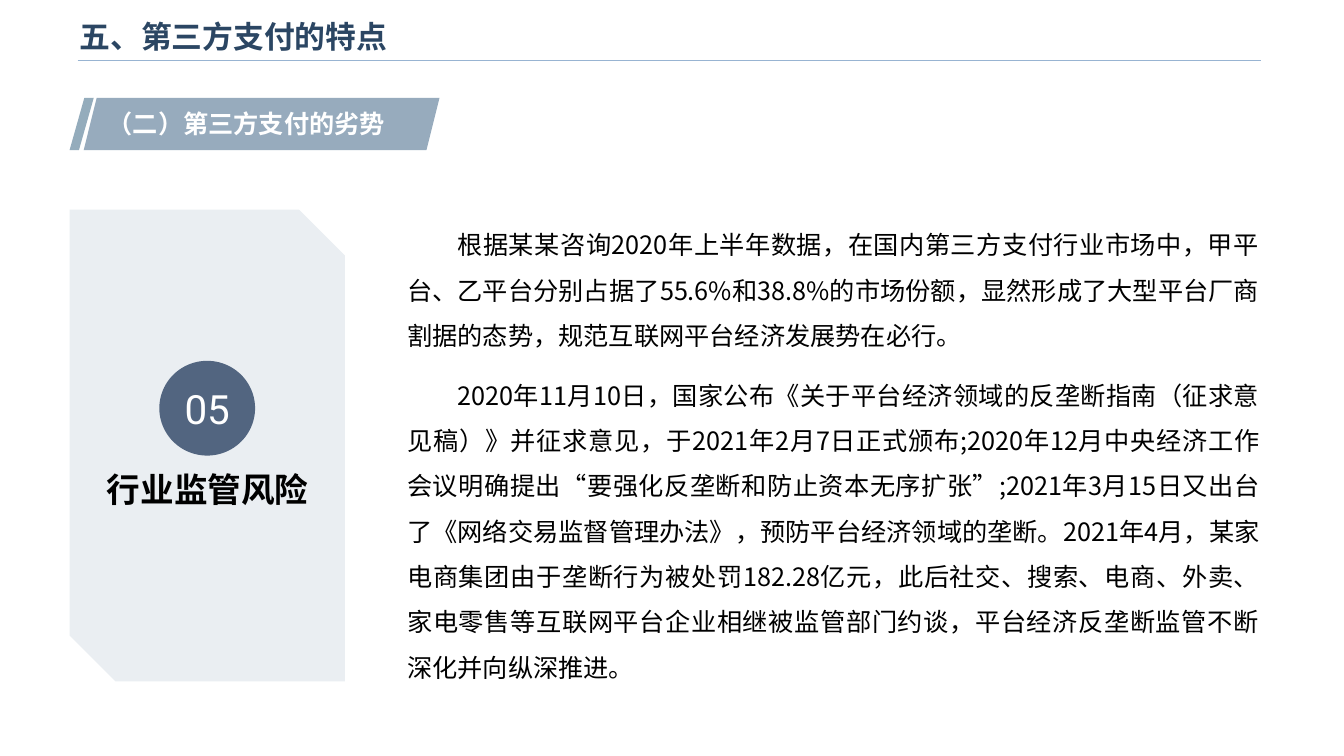
"""Build the slide on the regulatory risk of third-party payment."""
import dataclasses
import typing

import pptx
import pptx.dml.color
import pptx.enum.shapes
import pptx.enum.text
import pptx.oxml
import pptx.oxml.ns
import pptx.util

PX = 9144
Kind = pptx.enum.shapes.MSO_SHAPE
Align = pptx.enum.text.PP_ALIGN
Anchor = pptx.enum.text.MSO_ANCHOR
Fit = pptx.enum.text.MSO_AUTO_SIZE
Pt = pptx.util.Pt
Box = tuple[int, int, int, int]
SANS = "Noto Sans CJK SC"
COLORS = {
    "rule": "98B4D2", "title": "2B4663", "slip": "94ACBC", "tag": "97ABBD",
    "card": "EAEEF2", "disc": "526580", "white": "FFFFFF", "black": "000000",
}


@dataclasses.dataclass(frozen=True)
class Form:
    kind: Kind
    box: Box
    fill: str
    skew: typing.Optional[float] = None


@dataclasses.dataclass(frozen=True)
class Style:
    size: float
    color: str
    bold: bool = False
    face: str = SANS
    para: dict[str, typing.Any] = dataclasses.field(default_factory=dict)
    indent: int = 0


@dataclasses.dataclass(frozen=True)
class Label:
    box: Box
    style: Style
    lines: tuple[str, ...]


TAG = (
    Form(Kind.PARALLELOGRAM, (69, 97, 24, 52), "slip", 0.613),
    Form(Kind.PARALLELOGRAM, (83, 97, 353, 52), "tag", 0.25),
)
CARD = Form(Kind.SNIP_2_DIAG_RECTANGLE, (69, 208, 273, 468), "card")
DISC = Form(Kind.OVAL, (158, 358, 95, 94), "disc")

HEAD = Style(22, "title", True, "Arial", {"alignment": Align.LEFT})
COUNT = Style(28.8, "white", False, "Roboto", {"alignment": Align.CENTER})
PROSE = Style(
    18, "black", indent=50,
    para={"alignment": Align.JUSTIFY, "line_spacing": 1.5, "space_after": Pt(10)},
)
LABELS = (
    Label((97, 103, 308, 40), Style(18, "white", True), ("（二）第三方支付的劣势",)),
    Label(
        (75, 460, 262, 50),
        Style(24, "black", True, para={"alignment": Align.CENTER}),
        ("行业监管风险",),
    ),
    Label(
        (394, 208, 865, 478), PROSE,
        (
            "根据某某咨询2020年上半年数据，在国内第三方支付行业市场中，"
            "甲平台、乙平台分别占据了55.6%和38.8%的市场份额，"
            "显然形成了大型平台厂商割据的态势，规范互联网平台经济发展势在必行。",
            "2020年11月10日，国家公布《关于平台经济领域的反垄断指南（征求意见稿）》"
            "并征求意见，于2021年2月7日正式颁布;2020年12月中央经济工作会议明确提出"
            "“要强化反垄断和防止资本无序扩张”;2021年3月15日又出台了"
            "《网络交易监督管理办法》，预防平台经济领域的垄断。"
            "2021年4月，某家电商集团由于垄断行为被处罚182.28亿元，"
            "此后社交、搜索、电商、外卖、家电零售等互联网平台企业相继被监管部门约谈，"
            "平台经济反垄断监管不断深化并向纵深推进。",
        ),
    ),
)


def scale(*sizes: int) -> list[pptx.util.Emu]:
    """Turn px into EMU."""
    return [pptx.util.Emu(size * PX) for size in sizes]


def tint(name: str) -> pptx.dml.color.RGBColor:
    """Look up a colour by name."""
    return pptx.dml.color.RGBColor.from_string(COLORS[name])


def apply(thing: typing.Any, values: dict[str, typing.Any]) -> None:
    """Set each attribute given in values."""
    for key, value in values.items():
        setattr(thing, key, value)


def write(frame: typing.Any, lines: tuple[str, ...], style: Style) -> None:
    """Fill a text frame with one styled paragraph per line."""
    for index, line in enumerate(lines):
        para = frame.add_paragraph() if index else frame.paragraphs[0]
        apply(para, style.para)
        if style.indent:
            props = para._p.get_or_add_pPr()
            props.set("marL", "0")
            props.set("indent", str(style.indent * PX))
        run = para.add_run()
        run.text = line
        apply(run.font, {"size": Pt(style.size), "bold": style.bold, "name": style.face})
        run.font.color.rgb = tint(style.color)
        east = pptx.oxml.parse_xml(
            f'<a:ea {pptx.oxml.ns.nsdecls("a")} typeface="{SANS}"/>'
        )
        run.font._element.find(pptx.oxml.ns.qn("a:latin")).addnext(east)


def draw(shapes: typing.Any, form: Form) -> typing.Any:
    """Draw a flat filled shape."""
    shape = shapes.add_shape(form.kind, *scale(*form.box))
    shape.shadow.inherit = False
    shape.fill.solid()
    shape.fill.fore_color.rgb = tint(form.fill)
    shape.line.fill.background()
    if form.skew is not None:
        shape.adjustments[0] = form.skew
    return shape


def place(shapes: typing.Any, label: Label) -> None:
    """Add a wrapped text box."""
    frame = shapes.add_textbox(*scale(*label.box)).text_frame
    apply(frame, {"word_wrap": True, "auto_size": Fit.SHAPE_TO_FIT_TEXT})
    write(frame, label.lines, label.style)


def rule(shapes: typing.Any) -> None:
    """Draw the line under the title."""
    link = shapes.add_connector(
        pptx.enum.shapes.MSO_CONNECTOR.STRAIGHT, *scale(77, 60, 1251, 60)
    )
    link.line.width = Pt(1)
    link.line.color.rgb = tint("rule")
    link._element.spPr.append(
        pptx.oxml.parse_xml(f'<a:effectLst {pptx.oxml.ns.nsdecls("a")}/>')
    )


def main() -> None:
    """Build and save the deck."""
    deck = pptx.Presentation()
    deck.slide_width, deck.slide_height = scale(1333, 750)
    slide = deck.slides.add_slide(deck.slide_layouts[5])
    shapes = slide.shapes

    title = shapes.title
    apply(title, dict(zip(("left", "top", "width", "height"), scale(69, 9, 1071, 53))))
    apply(title.text_frame, {"vertical_anchor": Anchor.MIDDLE, "auto_size": Fit.NONE})
    write(title.text_frame, ("五、第三方支付的特点",), HEAD)
    rule(shapes)

    group = shapes.add_group_shape()
    for form in TAG:
        draw(group.shapes, form)
    draw(shapes, CARD)
    for label in LABELS:
        place(shapes, label)

    frame = draw(shapes, DISC).text_frame
    sides = ("left", "right", "top", "bottom")
    apply(frame, {f"margin_{side}": 0 for side in sides})
    apply(frame, {"vertical_anchor": Anchor.MIDDLE, "word_wrap": False})
    write(frame, ("05",), COUNT)

    deck.save("out.pptx")


if __name__ == "__main__":
    main()
